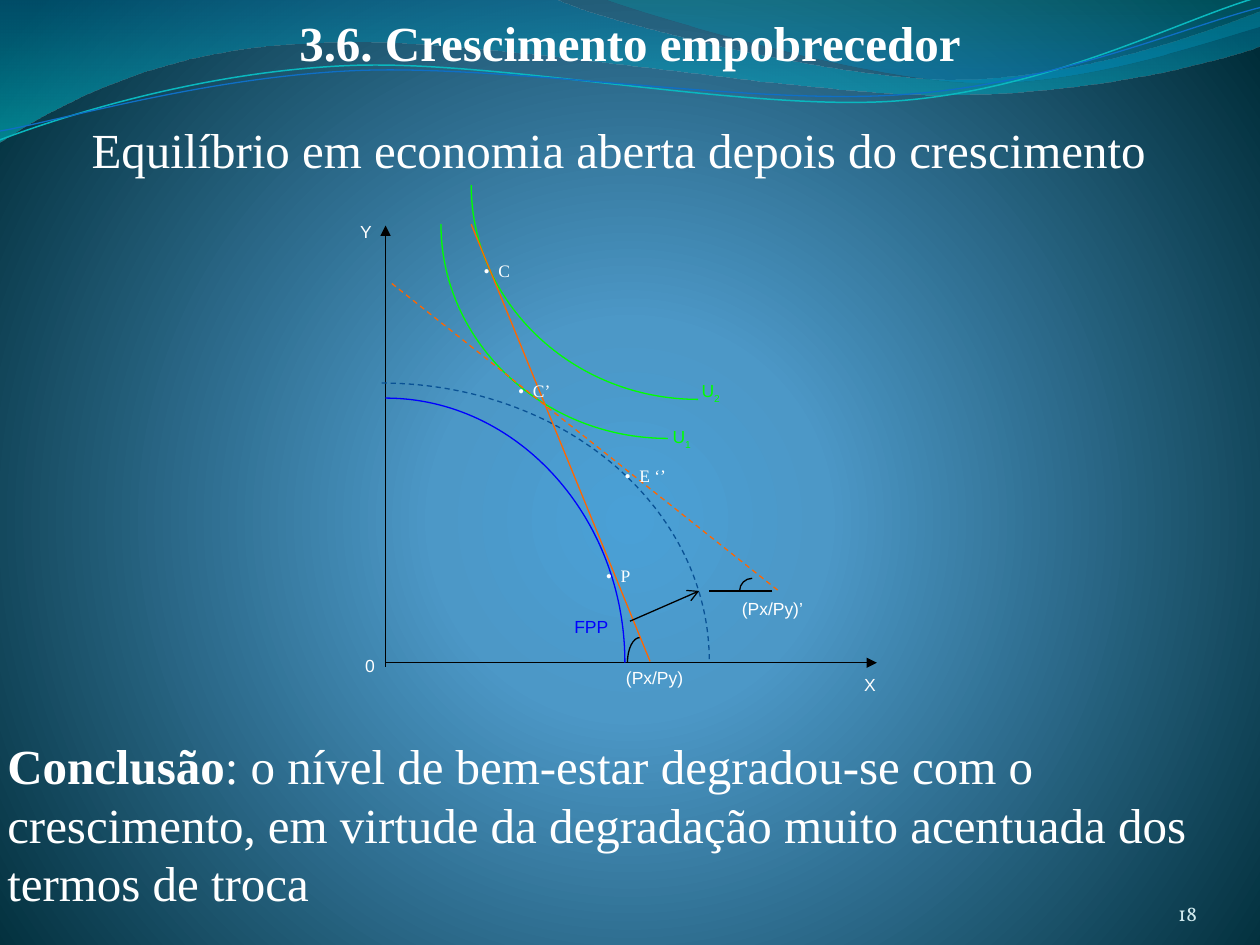
"""Build the slide on immiserizing growth in an open economy."""
import math

from lxml import etree
from pptx import Presentation
from pptx import util as u
from pptx.dml.color import RGBColor
from pptx.enum import dml, shapes, text
from pptx.oxml import parse_xml
from pptx.oxml.ns import nsdecls, qn

COLUMNS, ROWS = 100, 75
CELL = u.Inches(0.1)
SERIF, SANS, NUMERAL = "Times New Roman", "Arial", "Vollkorn"
COLORS = {
    "white": "FFFFFF", "black": "000000", "number": "D1EAEE",
    "utility": "00FF00", "frontier": "0000FF", "expanded": "095295",
    "price": "FF6600", "teal": "0AB8BF", "blue": "0F6FC6",
    "glow": "4AA0D6", "sky": "4C98C7", "night": "002C38",
    "wave_top": "0074A1", "wave_bottom": "00C6CF",
    "crest_top": "00A1A9", "crest_bottom": "008BBF",
}
DOWNWARD = '<a:lin ang="5400000" scaled="1"/>'
RADIAL = ('<a:path path="circle"><a:fillToRect l="10000" t="110000" '
          'r="10000" b="100000"/></a:path>')


def cells(count):
    """Turn a count of grid cells into a length."""
    return u.Emu(round(count * CELL))


def color(name):
    """Look up a named colour."""
    return RGBColor.from_string(COLORS[name])


def set_gradient(fill, element, stops, direction):
    """Give a fill (position, colour, opacity) stops in per cent."""
    fill.solid()
    stop_xml = "".join(
        f'<a:gs pos="{position * 1000}"><a:srgbClr val="{COLORS[name]}">'
        f'<a:alpha val="{opacity * 1000}"/></a:srgbClr></a:gs>'
        for position, name, opacity in stops)
    solid = element.xpath(".//a:solidFill")[0]
    solid.getparent().replace(solid, parse_xml(
        f'<a:gradFill {nsdecls("a")} rotWithShape="1"><a:gsLst>{stop_xml}'
        f'</a:gsLst>{direction}</a:gradFill>'))


def style_line(line, name, width=0.75, dashed=False):
    """Set the colour, width and dash of a line."""
    line.color.rgb = color(name)
    line.width = u.Pt(width)
    if dashed:
        line.dash_style = dml.MSO_LINE.DASH


def add_outline(slide, start, segments, closed=False):
    """Draw an unfilled outline; segments hold one point, or three for a Bézier curve."""
    points = [point for segment in segments for point in segment]
    builder = slide.shapes.build_freeform(*map(cells, start), scale=1.0)
    builder.add_line_segments([(cells(x), cells(y)) for x, y in points], close=closed)
    shape = builder.convert_to_shape()
    shape.shadow.inherit = False
    shape.fill.background()
    nodes = iter(shape.element.xpath(".//a:lnTo"))
    for segment in segments:
        first, *others = [next(nodes) for _ in segment]
        if others:
            curve = etree.Element(qn("a:cubicBezTo"))
            first.addprevious(curve)
            for node in (first, *others):
                curve.append(node[0])
                node.getparent().remove(node)
    return shape


def add_wave(slide, start, segments, stops):
    """Draw a closed wave with a translucent gradient."""
    shape = add_outline(slide, start, segments, closed=True)
    shape.line.fill.background()
    set_gradient(shape.fill, shape.element, stops, DOWNWARD)


def add_ribbon(slide, start, segments, center, name, width):
    """Draw a thin wavy line as a level curve turned by 357.3 degrees."""
    sine, cosine = math.sin(math.radians(2.7)), math.cos(math.radians(2.7))
    center_x, center_y = center

    def level(point):
        """Turn a point clockwise about the centre."""
        x, y = point[0] - center_x, point[1] - center_y
        return center_x + x * cosine - y * sine, center_y + x * sine + y * cosine

    shape = add_outline(slide, level(start),
                        [[level(point) for point in segment] for segment in segments])
    shape.rotation = 357.3
    style_line(shape.line, name, width)


def add_quarter(slide, start, end, name):
    """Draw a quarter ellipse that leaves horizontally and ends vertically."""
    (x0, y0), (x1, y1) = start, end
    bend = 0.55
    curve = [(x0 + bend * (x1 - x0), y0), (x1, y1 + bend * (y0 - y1)), end]
    style_line(add_outline(slide, start, [curve]).line, name)


def add_line(slide, start, end, name, head=None, dashed=False):
    """Draw a straight line, with an arrowhead at its end if named."""
    line = slide.shapes.add_connector(
        shapes.MSO_CONNECTOR.STRAIGHT, *map(cells, (*start, *end)))
    style_line(line.line, name, dashed=dashed)
    properties = line.element.spPr
    if head:
        properties.find(qn("a:ln")).append(
            parse_xml(f'<a:tailEnd {nsdecls("a")} type="{head}"/>'))
    properties.append(parse_xml(f'<a:effectLst {nsdecls("a")}/>'))


def add_text(slide, box, words, size=28, font=SERIF, name="white", align="LEFT",
             anchor="TOP", bold=False, grow=False):
    """Add a one-run text box and return it."""
    shape = slide.shapes.add_textbox(*map(cells, box))
    frame = shape.text_frame
    frame.word_wrap = True
    frame.vertical_anchor = text.MSO_ANCHOR[anchor]
    if grow:
        frame.auto_size = text.MSO_AUTO_SIZE.SHAPE_TO_FIT_TEXT
    frame.text = words
    frame.paragraphs[0].alignment = text.PP_ALIGN[align]
    format_run(frame.paragraphs[0].runs[0], size, font, name, bold)
    return shape


def format_run(run, size, font, name, bold=False):
    """Set the look of a run."""
    run.font.size = u.Pt(size)
    run.font.name = font
    run.font.bold = bold
    run.font.color.rgb = color(name)


def add_label(slide, corner, words, font=SANS, name="white", subscript=None):
    """Add a small diagram label, with a subscript if given."""
    shape = add_text(slide, (*corner, 10, 5), words, 10, font, name)
    if subscript:
        run = shape.text_frame.paragraphs[0].add_run()
        run.text = subscript
        format_run(run, 10, font, name)
        run.font._element.set("baseline", "-30000")


def add_backdrop(slide):
    """Paint the background and the waves along the top."""
    set_gradient(slide.background.fill, slide.element,
                 [(0, "glow", 100), (25, "sky", 100), (100, "night", 100)], RADIAL)
    add_wave(slide, (0, 0), [
        [(44, -0.1)], [(47.6, 1.7), (66.4, 6.3), (75.8, 6.3)],
        [(85.3, 6.3), (95.8, 2.6), (100, 0.9)], [(100.1, 3.6)],
        [(98.3, 4.4), (87, 7.6), (74.6, 7.5)], [(62.2, 7.5), (38.2, 2.8), (25.7, 3.4)],
        [(12.9, 3.6), (4.6, 8.3), (-0.1, 11.3)], [(0, 0)]],
        [(0, "wave_top", 45), (100, "wave_bottom", 55)])
    add_wave(slide, (47.9, -0.1), [
        [(50.9, 1.1), (68.2, 6.2), (76.9, 6.5)], [(85.6, 6.9), (96.1, 3.2), (100, 2.1)],
        [(100, 0)], [(47.9, -0.1)]], [(0, "crest_top", 30), (80, "crest_bottom", 45)])
    add_ribbon(slide, (0, 11.1), [
        [(4.8, 9.3), (15.8, 5.7), (27.7, 5.2)], [(39.5, 4.7), (59.3, 8.9), (71.3, 8)],
        [(83.3, 7.1), (93.8, 1.5), (99.8, -0.2)]], (49.9, 5.75), "teal", 0.85)
    add_ribbon(slide, (0, 10.4), [
        [(4.7, 9.6), (16.4, 6.1), (28.3, 5.6)], [(40.3, 5.1), (59.7, 8.4), (71.7, 7.5)],
        [(83.6, 6.7), (94.1, 2.1), (100, 0.6)]], (49.95, 5.9), "blue", 0.75)


def add_diagram(slide):
    """Draw the axes, frontiers, utility curves, price lines and labels."""
    add_line(slide, (30.6, 52.9), (30.6, 17.9), "black", "triangle")
    add_line(slide, (30.6, 52.6), (69.6, 52.6), "black", "triangle")
    for start, end, name in [
            ((55.4, 31.7), (37.4, 14.7), "utility"), ((53, 34.8), (35, 17.8), "utility"),
            ((30.6, 31.6), (49.6, 52.6), "frontier"),
            ((50.8, 50.6), (49.8, 52.6), "black"), ((59.7, 45.9), (58.7, 46.9), "black")]:
        add_quarter(slide, start, end, name)
    add_line(slide, (37.4, 17.8), (51.6, 52.5), "price")
    add_line(slide, (31.1, 22.5), (61.8, 46.9), "price", dashed=True)
    add_line(slide, (61.3, 46.9), (56.3, 46.9), "black")
    expanded = slide.shapes.add_shape(
        shapes.MSO_SHAPE.ARC, *map(cells, (4.3, 30.4, 52, 44.1)))
    expanded.shadow.inherit = False
    expanded.fill.background()
    style_line(expanded.line, "expanded", dashed=True)
    add_line(slide, (50, 49.3), (55.5, 46.9), "black", "arrow")
    for corner, words in [((57.9, 46.95), "(Px/Py)’"), ((48.7, 52.45), "(Px/Py)"),
                          ((67.6, 53), "X"), ((27.6, 17.05), "Y"), ((28, 51.5), "0")]:
        add_label(slide, corner, words)
    for corner, words in [((37.4, 20.15), "•  C"), ((47.1, 44.35), "•  P"),
                          ((39.8, 29.65), " •  C’"), ((47.9, 36.4), "  •  E ‘’")]:
        add_label(slide, corner, words, SERIF)
    for corner, level in [((52.4, 33.3), "1"), ((54.7, 29.65), "2")]:
        add_label(slide, corner, "U", name="utility", subscript=level)
    add_label(slide, (44.6, 48.4), "FPP", name="frontier")


def main():
    """Assemble and save the slide."""
    presentation = Presentation()
    presentation.slide_width, presentation.slide_height = cells(COLUMNS), cells(ROWS)
    slide = presentation.slides.add_slide(presentation.slide_layouts[6])
    add_backdrop(slide)
    add_text(slide, (0, 0.5, COLUMNS, 5.7), "3.6. Crescimento empobrecedor",
             align="CENTER", bold=True, grow=True)
    add_text(slide, (-0.4, 8.95, COLUMNS, 5.7),
             "Equilíbrio em economia aberta depois do crescimento ",
             align="CENTER", anchor="MIDDLE", grow=True)
    add_diagram(slide)
    conclusion = add_text(slide, (-0.4, 57.8, COLUMNS, 15.1), "Conclusão",
                          anchor="MIDDLE", bold=True, grow=True)
    run = conclusion.text_frame.paragraphs[0].add_run()
    run.text = (": o nível de bem-estar degradou-se com o crescimento, em virtude "
                "da degradação muito acentuada dos termos de troca")
    format_run(run, 28, SERIF, "white")
    number = add_text(slide, (86.7, 69.5, 8.3, 4), "18", 12, NUMERAL, "number",
                      "RIGHT", "BOTTOM").text_frame
    number.margin_left = number.margin_right = number.margin_top = number.margin_bottom = 0
    presentation.save("out.pptx")


if __name__ == "__main__":
    main()
